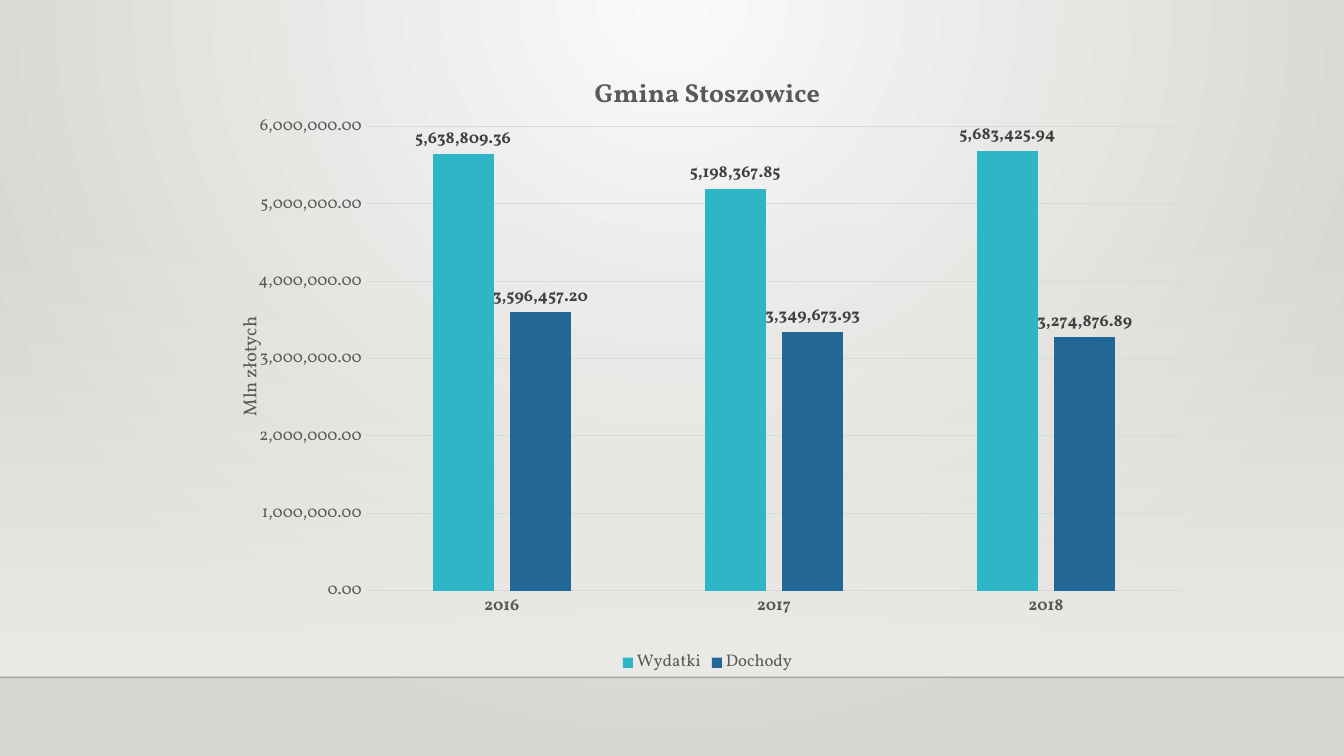
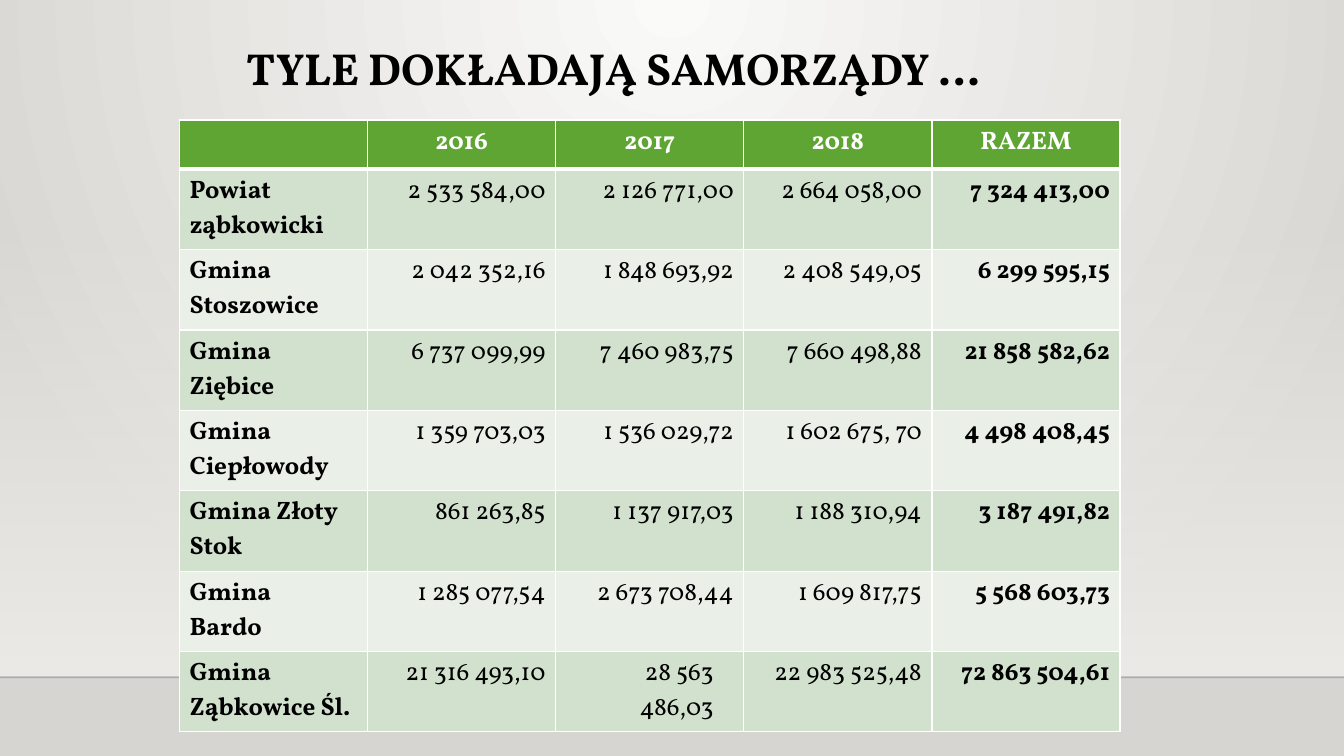
from dataclasses import dataclass

from pptx import Presentation
from pptx import util as u
from pptx.chart.data import CategoryChartData
from pptx.dml.color import RGBColor
from pptx.enum import chart as ch
from pptx.enum import shapes as sh
from pptx.enum import text as tx
from pptx.oxml import parse_xml
from pptx.oxml.ns import nsdecls, qn

# Content
CHART = {
    "title": "Gmina Stoszowice",
    "axis": "Mln złotych",
    "years": ("2016", "2017", "2018"),
    "series": {
        "Wydatki": (5638809.36, 5198367.85, 5683425.94),
        "Dochody": (3596457.20, 3349673.93, 3274876.89),
    },
}
TABLE_TITLE = "TYLE DOKŁADAJĄ SAMORZĄDY …"
TABLE = [
    ("", "2016", "2017", "2018", "RAZEM"),
    ("Powiat ząbkowicki", "2 533 584,00", "2 126 771,00", "2 664 058,00", "7 324 413,00"),
    ("Gmina Stoszowice", "2 042 352,16", "1 848 693,92", "2 408 549,05", "6 299 595,15"),
    ("Gmina Ziębice", "6 737 099,99", "7 460 983,75", "7 660 498,88", "21 858 582,62"),
    ("Gmina Ciepłowody", "1 359 703,03", "1 536 029,72", "1 602 675, 70", "4 498 408,45"),
    ("Gmina Złoty Stok", "861 263,85", "1 137 917,03", "1 188 310,94", "3 187 491,82"),
    ("Gmina\nBardo", "1 285 077,54", "2 673 708,44", "1 609 817,75", "5 568 603,73"),
    ("Gmina Ząbkowice Śl.", "21 316 493,10", "28 563 486,03", "22 983 525,48", "72 863 504,61"),
]
INDENTED_CELL = (7, 2)


@dataclass(frozen=True)
class Theme:
    font: str = "Vollkorn"
    glow: str = "FAFAF9"
    floor: str = "D7D5D2"
    wall: str = "EDEBE7"
    edge: str = "000001"
    black: str = "000000"
    white: str = "FFFFFF"
    grey: str = "595959"
    label: str = "404040"
    grid: str = "D9D9D9"
    header: str = "5FA534"
    bands: tuple = ("D2E1CE", "EAF0E8")
    series: tuple = ("2FB6C6", "236797")
    heading: float = 32
    body: float = 18
    chart_title: float = 18.6
    axis_title: float = 13.3
    small: float = 12


THEME = Theme()
WIDTH, HEIGHT = 13.33, 7.5
FLOOR_TOP = 6.72


def inches(*values):
    return [u.Inches(value) for value in values]


def style(font, size, color, bold=False):
    font.name, font.size, font.bold = THEME.font, u.Pt(size), bold
    font.color.rgb = RGBColor.from_string(color)


def gradient(start, end, start_alpha, direction):
    return parse_xml(
        f'<a:gradFill {nsdecls("a")} rotWithShape="1"><a:gsLst>'
        f'<a:gs pos="0"><a:srgbClr val="{start}"><a:alpha val="{start_alpha * 1000}"/></a:srgbClr></a:gs>'
        f'<a:gs pos="100000"><a:srgbClr val="{end}"/></a:gs></a:gsLst>{direction}</a:gradFill>')


def set_gradient(fill, properties, new_fill):
    fill.gradient()
    properties.replace(properties.find(qn("a:gradFill")), new_fill)


# Shared backdrop
def paint_background(master):
    fill = master.background.fill
    properties = master.element.cSld.find(qn("p:bg")).find(qn("p:bgPr"))
    circle = '<a:path path="circle"><a:fillToRect l="43000" t="0" r="43000" b="100000"/></a:path>'
    set_gradient(fill, properties, gradient(THEME.glow, THEME.floor, 100, circle))


def add_slide(presentation):
    slide = presentation.slides.add_slide(presentation.slide_layouts[6])
    wall = slide.shapes.add_shape(sh.MSO_SHAPE.RECTANGLE, *inches(0, 2.2, WIDTH, 4.5))
    wall.shadow.inherit = False
    wall.line.fill.background()
    set_gradient(wall.fill, wall.element.spPr,
                 gradient(THEME.wall, THEME.wall, 0, '<a:lin ang="5400000" scaled="0"/>'))
    edge = slide.shapes.add_connector(sh.MSO_CONNECTOR.STRAIGHT, *inches(0, FLOOR_TOP, WIDTH, FLOOR_TOP))
    edge.line.width = u.Pt(1)
    edge.line.color.rgb = RGBColor.from_string(THEME.edge)
    properties = edge.element.spPr
    color = next(properties.iter(qn("a:srgbClr")))
    color.append(parse_xml(f'<a:alpha {nsdecls("a")} val="20000"/>'))
    properties.append(parse_xml(f'<a:effectLst {nsdecls("a")}/>'))
    return slide


# Chart slide
def set_plot_area(chart, **shares):
    plot_area = chart.element.chart.plotArea
    for layout in plot_area.findall(qn("c:layout")):
        plot_area.remove(layout)
    sizes = "".join(f'<c:{key} val="{value}"/>' for key, value in shares.items())
    plot_area.insert(0, parse_xml(
        f'<c:layout {nsdecls("c")}><c:manualLayout><c:layoutTarget val="inner"/>'
        f'<c:xMode val="edge"/><c:yMode val="edge"/>{sizes}</c:manualLayout></c:layout>'))


def grid_line(line):
    line.width = u.Pt(0.75)
    line.color.rgb = RGBColor.from_string(THEME.grid)


def add_title(owner, words, size, bold):
    frame = owner.text_frame
    frame.text = words
    style(frame.paragraphs[0].runs[0].font, size, THEME.grey, bold)
    return frame


def add_budget_chart(slide):
    data = CategoryChartData(number_format="#,##0.00")
    data.categories = CHART["years"]
    for name, values in CHART["series"].items():
        data.add_series(name, values)
    chart = slide.shapes.add_chart(
        ch.XL_CHART_TYPE.COLUMN_CLUSTERED, *inches(2.31, 0.51, 9.42, 6.22), data).chart
    style(chart.font, THEME.small, THEME.grey)
    add_title(chart.chart_title, CHART["title"], THEME.chart_title, True)
    chart.chart_title.include_in_layout = False
    set_plot_area(chart, x=0.14, y=0.12, w=0.86, h=0.74)

    chart.has_legend = True
    chart.legend.position = ch.XL_LEGEND_POSITION.BOTTOM
    chart.legend.include_in_layout = False
    style(chart.legend.font, THEME.small, THEME.grey)

    years, amounts = chart.category_axis, chart.value_axis
    for axis, bold in ((years, True), (amounts, False)):
        axis.major_tick_mark = axis.minor_tick_mark = ch.XL_TICK_MARK.NONE
        style(axis.tick_labels.font, THEME.small, THEME.grey, bold)
    grid_line(years.format.line)
    grid_line(amounts.major_gridlines.format.line)
    amounts.format.line.fill.background()
    amounts.minimum_scale, amounts.maximum_scale, amounts.major_unit = 0, 6000000, 1000000
    amounts.tick_labels.number_format = "#,##0.00"
    amounts.tick_labels.number_format_is_linked = False
    frame = add_title(amounts.axis_title, CHART["axis"], THEME.axis_title, False)
    body = next(amounts.axis_title.element.iter(qn("a:bodyPr")))
    body.set("rot", "-5400000")
    body.set("vert", "horz")

    plot = chart.plots[0]
    plot.vary_by_categories = False
    plot.gap_width, plot.overlap = 219, -27
    for series, color in zip(plot.series, THEME.series):
        series.format.fill.solid()
        series.format.fill.fore_color.rgb = RGBColor.from_string(color)
        labels = series.data_labels
        labels.show_value = True
        labels.position = ch.XL_LABEL_POSITION.OUTSIDE_END
        style(labels.font, THEME.small, THEME.label, True)


# Table slide
def set_borders(cell, **widths):
    properties = cell._tc.get_or_add_tcPr()
    for index, side in enumerate("LRTB"):
        width = u.Pt(widths.get(side, 1))
        properties.insert(index, parse_xml(
            f'<a:ln{side} {nsdecls("a")} w="{width}"><a:solidFill>'
            f'<a:srgbClr val="{THEME.white}"/></a:solidFill></a:ln{side}>'))


def add_cost_table(slide):
    rows, columns = len(TABLE), len(TABLE[0])
    heights = [0.49] + [0.67] * (rows - 2) + [0.65]
    table = slide.shapes.add_table(
        rows, columns, *inches(1.78, 1.19, 9.33, sum(heights))).table
    table.horz_banding = False
    for row, height in zip(table.rows, heights):
        row.height = u.Inches(height)
    for r, values in enumerate(TABLE):
        for c, value in enumerate(values):
            cell = table.cell(r, c)
            cell.text = value
            cell.fill.solid()
            color = THEME.bands[(r - 1) % 2] if r else THEME.header
            cell.fill.fore_color.rgb = RGBColor.from_string(color)
            set_borders(cell, B=1 if r else 3, T=3 if r == 1 else 1)
            align = tx.PP_ALIGN.RIGHT if c else tx.PP_ALIGN.LEFT
            for paragraph in cell.text_frame.paragraphs:
                paragraph.alignment = align if r else tx.PP_ALIGN.CENTER
                style(paragraph.font, THEME.body, THEME.black if r else THEME.white,
                      r == 0 or c in (0, columns - 1))
                for run in paragraph.runs:
                    style(run.font, THEME.body, THEME.black if r else THEME.white,
                          r == 0 or c in (0, columns - 1))
    table.cell(*INDENTED_CELL).margin_right = u.Inches(0.3)


def add_heading(slide, words):
    frame = slide.shapes.add_textbox(*inches(2.35, 0.36, 9.21, 0.64)).text_frame
    frame.word_wrap = True
    frame.auto_size = tx.MSO_AUTO_SIZE.SHAPE_TO_FIT_TEXT
    frame.text = words
    style(frame.paragraphs[0].runs[0].font, THEME.heading, THEME.black, True)


def main():
    presentation = Presentation()
    presentation.slide_width, presentation.slide_height = inches(WIDTH, HEIGHT)
    paint_background(presentation.slide_master)
    add_budget_chart(add_slide(presentation))
    table_slide = add_slide(presentation)
    add_cost_table(table_slide)
    add_heading(table_slide, TABLE_TITLE)
    presentation.save("out.pptx")


if __name__ == "__main__":
    main()
